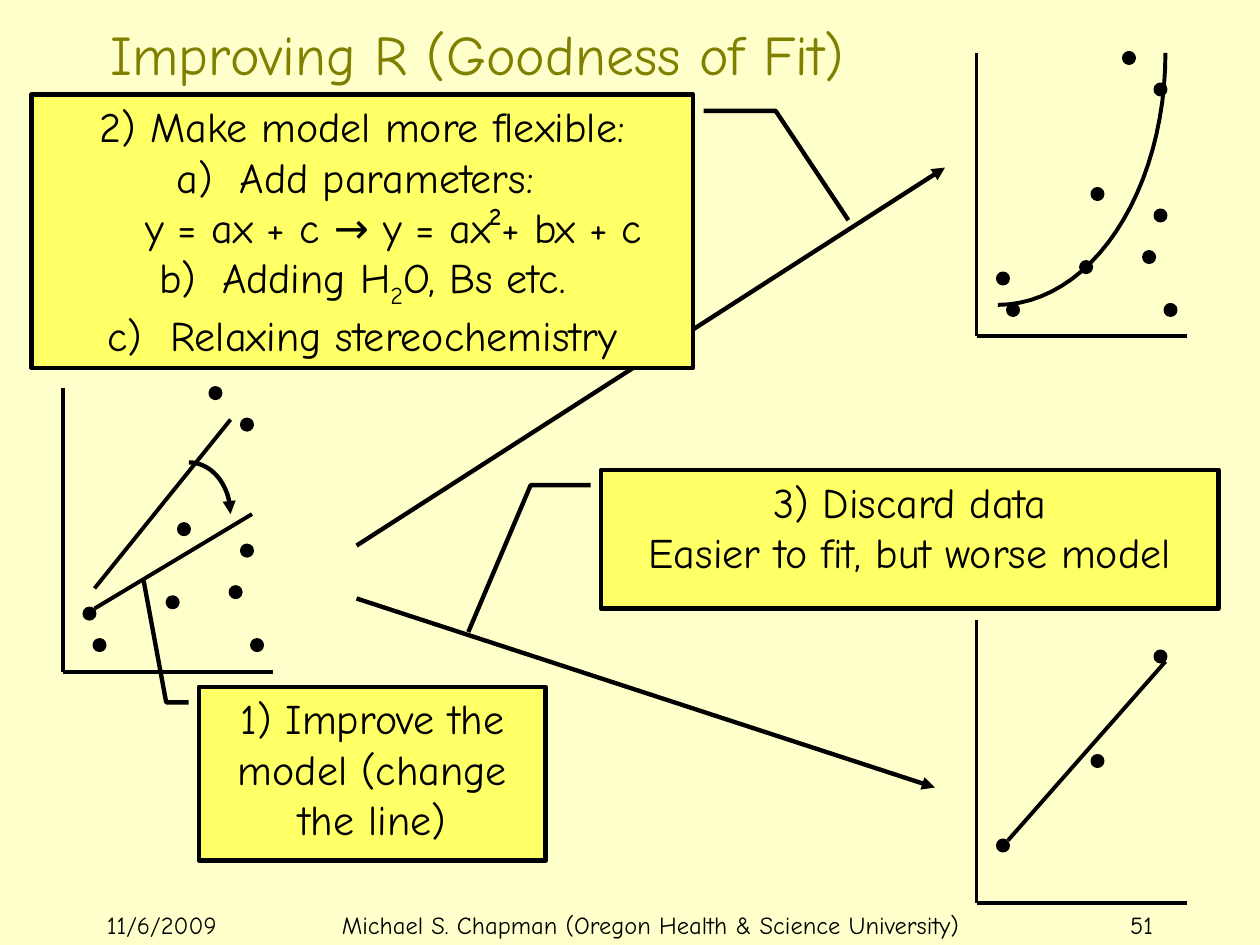
import math
from dataclasses import dataclass

from lxml import etree
from pptx import Presentation
from pptx.dml.color import RGBColor
from pptx.enum.shapes import MSO_CONNECTOR, MSO_SHAPE
from pptx.enum.text import MSO_ANCHOR, PP_ALIGN
from pptx.oxml.ns import qn
from pptx.util import Inches, Pt

STRAIGHT = MSO_CONNECTOR.STRAIGHT
OVAL = MSO_SHAPE.OVAL
CALLOUT = MSO_SHAPE.LINE_CALLOUT_2
LEFT, CENTER, RIGHT = PP_ALIGN.LEFT, PP_ALIGN.CENTER, PP_ALIGN.RIGHT
TOP, MIDDLE = MSO_ANCHOR.TOP, MSO_ANCHOR.MIDDLE

CREAM = RGBColor(0xFF, 0xFF, 0xCC)
YELLOW = RGBColor(0xFF, 0xFF, 0x66)
OLIVE = RGBColor(0x80, 0x80, 0x00)
BLACK = RGBColor(0x00, 0x00, 0x00)
FONT = "Comic Neue"

AXIS_WIDTH, AXIS_HEIGHT = 1.67, 2.25
DOT_SIZE = 0.08
THIN, THICK = 2.25, 2.5
CURVE_STEPS = 24


@dataclass(frozen=True)
class Span:
    text: str
    baseline: int = 0


@dataclass(frozen=True)
class Para:
    spans: tuple[Span, ...]
    hanging: bool = False
    lettered: bool = False


@dataclass(frozen=True)
class Label:
    text: str
    frame: tuple[float, float, float, float]
    align: PP_ALIGN
    size: int = 14
    color: RGBColor = BLACK
    anchor: MSO_ANCHOR = TOP


@dataclass(frozen=True)
class Callout:
    frame: tuple[float, float, float, float]
    leader: tuple[float, ...]
    paras: tuple[Para, ...]


@dataclass(frozen=True)
class Plot:
    left: float
    top: float
    dots: tuple[tuple[float, float], ...]


DATA = ((0.17, 1.75), (0.92, 1.08), (1.42, 0.25), (0.83, 1.66), (1.42, 1.25),
        (1.33, 1.58), (1.17, 0), (0.25, 2), (1.5, 2))
FLEXIBLE_PLOT = Plot(7.75, 0.42, DATA)
DISCARD_PLOT = Plot(7.75, 4.92, DATA[:3])
START_PLOT = Plot(0.5, 3.08, DATA)

LABELS = (
    Label("11/6/2009", (0.75, 7.17, 1.33, 0.17), LEFT),
    Label("Michael S. Chapman (Oregon Health & Science University)",
          (2.33, 7.17, 5.67, 0.17), CENTER),
    Label("51", (8.25, 7.17, 1, 0.17), RIGHT),
    Label("Improving R (Goodness of Fit)", (0, 0.17, 7.58, 0.5), CENTER, 32, OLIVE, MIDDLE),
)

IMPROVE = Callout((1.58, 5.45, 2.75, 1.38), (0.09, -0.03, 0.09, -0.095, -0.61, -0.16),
                  (Para((Span("1) Improve the model (change the line)"),)),))
FLEXIBLE = Callout((0.25, 0.75, 5.25, 2.17), (0.06, 1.016, 0.06, 1.125, 0.46, 1.235), (
    Para((Span("2) Make model more flexible:"),), True),
    Para((Span("Add parameters: \ny = ax + c → y = ax²+ bx + c"),), True, True),
    Para((Span("Adding H"), Span("2", -25), Span("O, Bs etc.")), True, True),
    Para((Span("Relaxing stereochemistry"),), True, True),
))
DISCARD = Callout((4.77, 3.73, 4.9, 1.1), (0.11, -0.017, 0.11, -0.114, 1.17, -0.215), (
    Para((Span("3) Discard data"),)),
    Para((Span("Easier to fit, but worse model"),)),
))


def add_span(para, span: Span, size: int, color: RGBColor) -> None:
    for index, line in enumerate(span.text.split("\n")):
        if index:
            para.add_line_break()
        run = para.add_run()
        run.text = line
        run.font.name = FONT
        run.font.size = Pt(size)
        run.font.color.rgb = color
        if span.baseline:
            run.font._element.set("baseline", str(span.baseline * 1000))


def style_line(shape, width: float, arrow: bool = False) -> None:
    shape.line.color.rgb = BLACK
    shape.line.width = Pt(width)
    if arrow:
        etree.SubElement(shape.line._get_or_add_ln(), qn("a:tailEnd"), type="triangle")


def add_label(slide, label: Label) -> None:
    box = slide.shapes.add_textbox(*map(Inches, label.frame))
    frame = box.text_frame
    frame.word_wrap = True
    frame.vertical_anchor = label.anchor
    para = frame.paragraphs[0]
    para.alignment = label.align
    add_span(para, Span(label.text), label.size, label.color)


def add_line(slide, start: tuple[float, float], end: tuple[float, float],
             width: float = THIN, arrow: bool = False) -> None:
    line = slide.shapes.add_connector(STRAIGHT, *map(Inches, (*start, *end)))
    style_line(line, width, arrow)
    etree.SubElement(line._element.spPr, qn("a:effectLst"))


def add_quarter_curve(slide, center: tuple[float, float], radii: tuple[float, float],
                      width: float, arrow: bool, top_first: bool) -> None:
    angles = [math.pi / 2 * step / CURVE_STEPS for step in range(CURVE_STEPS + 1)]
    direction = -1 if top_first else 1
    points = [(Inches(center[0] + radii[0] * math.cos(angle)),
               Inches(center[1] + direction * radii[1] * math.sin(angle)))
              for angle in angles[::direction]]
    builder = slide.shapes.build_freeform(*points[0])
    builder.add_line_segments(points[1:], close=False)
    curve = builder.convert_to_shape()
    curve.shadow.inherit = False
    curve.fill.background()
    style_line(curve, width, arrow)


def add_plot(slide, plot: Plot) -> None:
    bottom = plot.top + AXIS_HEIGHT
    add_line(slide, (plot.left, plot.top), (plot.left, bottom))
    add_line(slide, (plot.left, bottom), (plot.left + AXIS_WIDTH, bottom))
    for x, y in plot.dots:
        dot = slide.shapes.add_shape(OVAL, Inches(plot.left + x), Inches(plot.top + y),
                                     Inches(DOT_SIZE), Inches(DOT_SIZE))
        dot.shadow.inherit = False
        dot.fill.solid()
        dot.fill.fore_color.rgb = BLACK
        style_line(dot, THIN)


def add_callout(slide, callout: Callout) -> None:
    box = slide.shapes.add_shape(CALLOUT, *map(Inches, callout.frame))
    for index, value in enumerate(callout.leader):
        box.adjustments[index] = value
    box.shadow.inherit = False
    box.fill.solid()
    box.fill.fore_color.rgb = YELLOW
    style_line(box, THICK)
    frame = box.text_frame
    frame.word_wrap = True
    frame.vertical_anchor = TOP
    for index, item in enumerate(callout.paras):
        para = frame.add_paragraph() if index else frame.paragraphs[0]
        para.alignment = CENTER
        properties = para._p.get_or_add_pPr()
        if item.hanging:
            properties.set("marL", str(Inches(0.5)))
            properties.set("indent", str(Inches(-0.5)))
        if item.lettered:
            etree.SubElement(properties, qn("a:buAutoNum"), type="alphaLcParenR")
        for span in item.spans:
            add_span(para, span, 24, BLACK)


def main() -> None:
    deck = Presentation()
    deck.slide_width, deck.slide_height = Inches(10), Inches(7.5)
    page = deck.slides.add_slide(deck.slide_layouts[6])
    page.background.fill.solid()
    page.background.fill.fore_color.rgb = CREAM
    for label in LABELS:
        add_label(page, label)
    add_plot(page, FLEXIBLE_PLOT)
    add_quarter_curve(page, (7.92, 0.42), (1.33, 2), THIN, False, False)
    add_plot(page, DISCARD_PLOT)
    add_line(page, (8, 6.67), (9.25, 5.25))
    add_plot(page, START_PLOT)
    add_line(page, (0.75, 4.67), (1.83, 3.33))
    add_line(page, (0.75, 4.83), (2, 4.08))
    add_callout(page, IMPROVE)
    add_quarter_curve(page, (1.5, 4.08), (0.33, 0.41), THICK, True, True)
    add_line(page, (2.83, 4.33), (7.5, 1.33), THICK, True)
    add_callout(page, FLEXIBLE)
    add_line(page, (2.83, 4.75), (7.42, 6.25), THICK, True)
    add_callout(page, DISCARD)
    deck.save("out.pptx")


if __name__ == "__main__":
    main()
